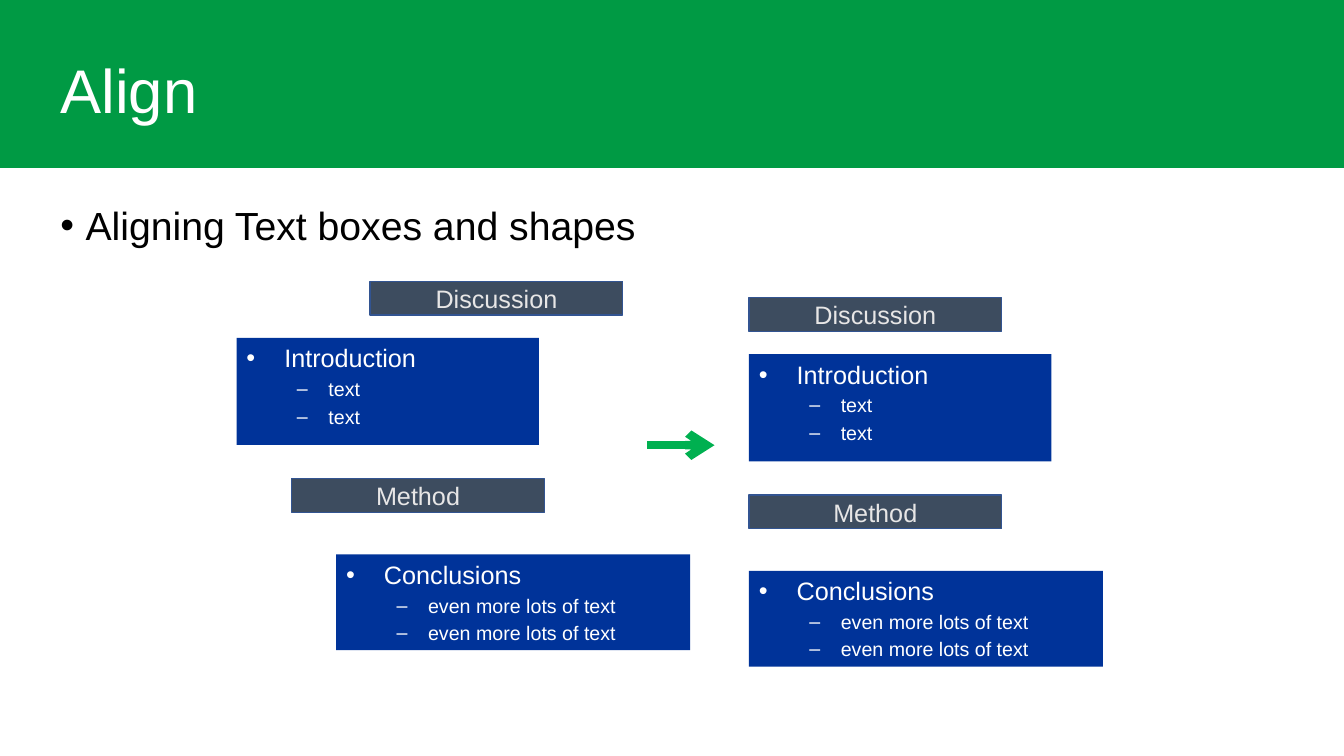
import pptx
import pptx.dml.color
import pptx.enum.shapes
import pptx.enum.text
import pptx.oxml.ns
import pptx.util
from lxml import etree

Pt = pptx.util.Pt
ALIGN = pptx.enum.text.PP_ALIGN
ANCHOR = pptx.enum.text.MSO_ANCHOR

GREEN, NAVY, SLATE = "009A44", "003399", "3D4C5F"
LABEL_EDGE, LABEL_TEXT, ARROW = "325491", "E7E6E6", "00B050"
WHITE, BLACK = "FFFFFF", "000000"


def rgb(hex_string):
    return pptx.dml.color.RGBColor.from_string(hex_string)


def add_xml(parent, tag, **attributes):
    return etree.SubElement(parent, pptx.oxml.ns.qn(tag), **attributes)


def add_text(tf, text, size, color, align=ALIGN.LEFT, bullet=None, margin=0,
             hang=0, level=0, before=0, spacing=None):
    """Fill the empty first paragraph of a frame, or append a new one."""
    p = tf.paragraphs[0]
    if p.runs:
        p = tf.add_paragraph()
        p.space_before = Pt(before)
    p.alignment = align
    p.level = level
    if spacing:
        p.line_spacing = spacing
    if bullet:
        pPr = p._p.get_or_add_pPr()
        pPr.set("marL", str(Pt(margin)))
        pPr.set("indent", str(Pt(-hang)))
        add_xml(pPr, "a:buFont", typeface="Arial")
        add_xml(pPr, "a:buChar", char=bullet)
    r = p.add_run()
    r.text = text
    r.font.name = "Arial"
    r.font.size = Pt(size)
    r.font.color.rgb = rgb(color)


def add_rect(s, left, top, width, height, fill, edge=None):
    sp = s.shapes.add_shape(pptx.enum.shapes.MSO_SHAPE.RECTANGLE,
                            Pt(left), Pt(top), Pt(width), Pt(height))
    sp.shadow.inherit = False
    sp.fill.solid()
    sp.fill.fore_color.rgb = rgb(fill)
    if edge:
        sp.line.color.rgb = rgb(edge)
        sp.line.width = Pt(1)
    else:
        sp.line.fill.background()
    return sp


def add_header(s, text, width, height):
    title = s.shapes.title
    band = add_rect(s, 0, 0, width, height, GREEN)
    title._element.addprevious(band._element)
    title.left, title.top = Pt(36), Pt(21.6)
    title.width, title.height = Pt(width - 80), Pt(90)
    tf = title.text_frame
    tf.auto_size = pptx.enum.text.MSO_AUTO_SIZE.NONE
    tf.vertical_anchor = ANCHOR.MIDDLE
    add_text(tf, text, 44, WHITE, spacing=0.9)


def add_lead(s, text, left, top, width, height):
    tf = s.shapes.add_textbox(Pt(left), Pt(top), Pt(width), Pt(height)).text_frame
    tf.word_wrap = True
    add_text(tf, text, 28, BLACK, bullet="•", margin=18, hang=18, spacing=0.9)


def add_label(s, text, left, top):
    sp = add_rect(s, left, top, 180.5, 24, SLATE, LABEL_EDGE)
    sp.text_frame.vertical_anchor = ANCHOR.MIDDLE
    add_text(sp.text_frame, text, 18, LABEL_TEXT, align=ALIGN.CENTER)


def add_list(s, heading, item, left, top, width, height):
    """Navy box with a heading and the same item twice below it."""
    tf = add_rect(s, left, top, width, height, NAVY).text_frame
    tf.vertical_anchor = ANCHOR.TOP
    add_text(tf, heading, 18, WHITE, bullet="•", margin=27, hang=27)
    for _ in range(2):
        add_text(tf, item, 14, WHITE, bullet="–", margin=58.5, hang=22.5,
                 level=1, before=2.8)


def add_stack(s, top, lefts):
    """Four boxes at fixed heights below top, each with its own left edge."""
    discussion, introduction, method, conclusions = lefts
    add_list(s, "Introduction", "text", introduction, top + 40.4, 216, 76.5)
    add_list(s, "Conclusions", "even more lots of text", conclusions,
             top + 195.1, 252.8, 68.4)
    add_label(s, "Discussion", discussion, top)
    add_label(s, "Method", method, top + 141.1)


def add_arrow(s, left, right, y):
    line = s.shapes.add_connector(pptx.enum.shapes.MSO_CONNECTOR.STRAIGHT,
                                  Pt(left), Pt(y), Pt(right), Pt(y))
    line.line.color.rgb = rgb(ARROW)
    line.line.width = Pt(6)
    add_xml(line.line._get_or_add_ln(), "a:tailEnd", type="arrow")
    add_xml(line._element.spPr, "a:effectLst")


def add_align_slide(prs):
    s = prs.slides.add_slide(prs.slide_layouts[5])
    add_header(s, "Align", 960, 120)
    add_lead(s, "Aligning Text boxes and shapes", 36, 144, 525, 70)
    add_stack(s, 200.9, [264.4, 169, 208.4, 240.2])
    add_stack(s, 212.6, [535] * 4)
    add_arrow(s, 462.2, 510.4, 318)


def main():
    prs = pptx.Presentation()
    prs.slide_width, prs.slide_height = Pt(960), Pt(540)
    add_align_slide(prs)
    prs.save("out.pptx")


if __name__ == "__main__":
    main()
